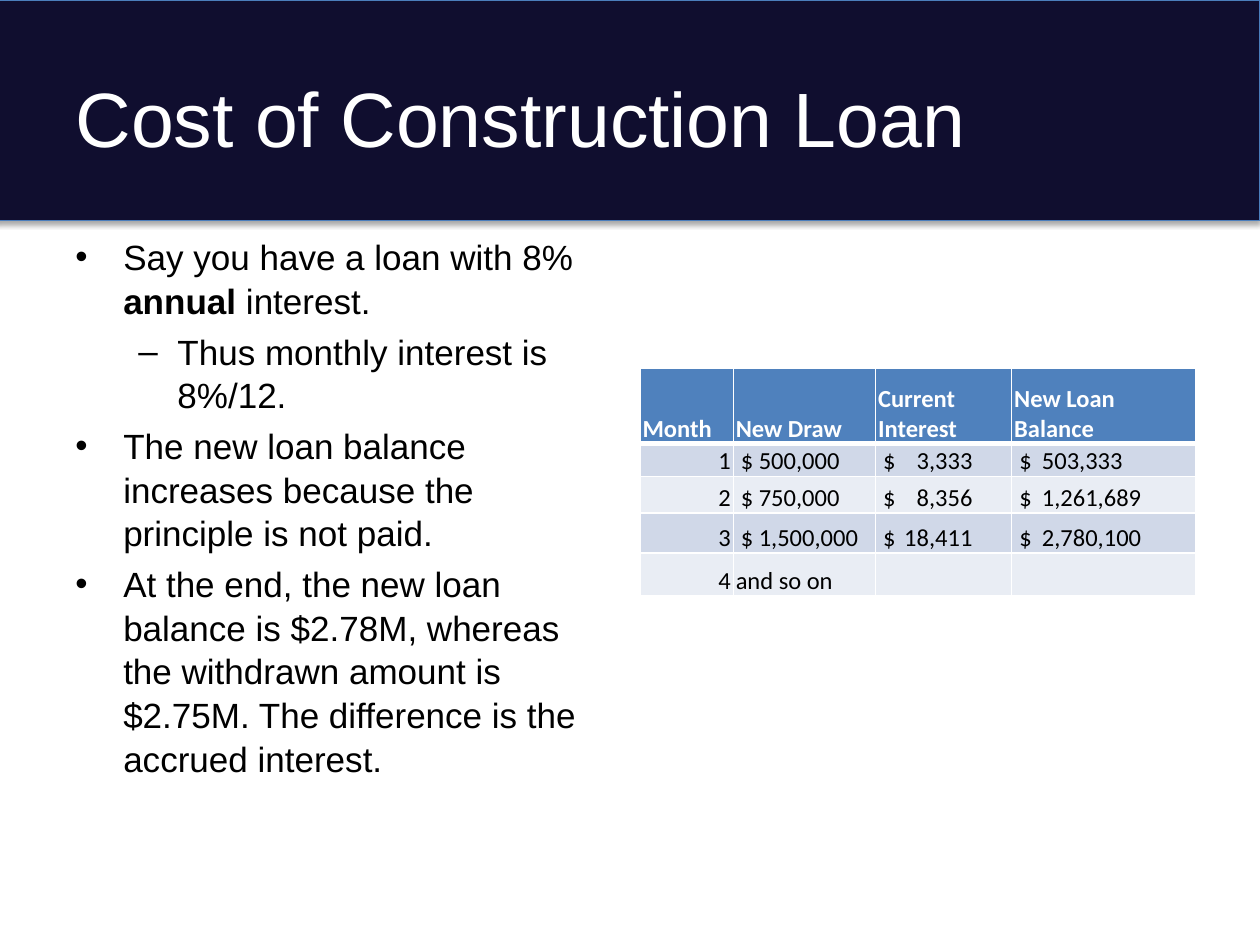
import pptx
import pptx.dml.color
import pptx.enum.shapes
import pptx.enum.text
import pptx.oxml
import pptx.oxml.ns
import pptx.util

Inches = pptx.util.Inches
Pt = pptx.util.Pt
ALIGN = pptx.enum.text.PP_ALIGN
ANCHOR = pptx.enum.text.MSO_ANCHOR

COLORS = {
    "navy": "100E2F", "edge": "4B7EBC", "white": "FFFFFF", "black": "000000",
    "head": "4F81BD", "dark": "D0D8E8", "light": "E9EDF4",
}
POINTS = [
    (0, [("Say you have a loan with 8% ", False), ("annual", True), (" interest.", False)]),
    (1, [("Thus monthly interest is 8%/12.", False)]),
    (0, [("The new loan balance increases because the principle is not paid.", False)]),
    (0, [("At the end, the new loan balance is $2.78M, whereas the withdrawn "
          "amount is $2.75M. The difference is the accrued interest.", False)]),
]
LEVELS = [("•", 0.38, 0.38), ("–", 0.81, 0.31)]
ROWS = [
    ["Month", "New Draw", "Current Interest", "New Loan Balance"],
    ["1", "$ 500,000", "$\t3,333", "$\t503,333"],
    ["2", "$ 750,000", "$\t8,356", "$\t1,261,689"],
    ["3", "$ 1,500,000", "$\t18,411", "$\t2,780,100"],
    ["4", "and so on", "", ""],
]
WIDTHS = [0.74, 1.13, 1.08, 1.46]
HEIGHTS = [0.6, 0.26, 0.29, 0.32, 0.34]
TABS = {2: (0.71, "r"), 3: (0.18, "l")}


def color(name):
    return pptx.dml.color.RGBColor.from_string(COLORS[name])


def node(xml):
    space = pptx.oxml.ns.nsdecls("a")
    return pptx.oxml.parse_xml(xml.replace(" ", f" {space} ", 1))


def text(para, words, size=20, font="Arial", ink="black", bold=False):
    run = para.add_run()
    run.text = words
    run.font.size = Pt(size)
    run.font.name = font
    run.font.bold = bold
    run.font.color.rgb = color(ink)


def place(shape, left, top, width, height):
    shape.left, shape.top = Inches(left), Inches(top)
    shape.width, shape.height = Inches(width), Inches(height)


def banner(slide):
    bar = slide.shapes.add_shape(
        pptx.enum.shapes.MSO_SHAPE.RECTANGLE,
        Inches(-0.04), 0, Inches(10.04), Inches(1.75))
    bar.fill.solid()
    bar.fill.fore_color.rgb = color("navy")
    bar.line.color.rgb = color("edge")
    bar.line.width = Pt(0.75)
    bar.shadow.inherit = False
    glow = bar.element.spPr.find(pptx.oxml.ns.qn("a:effectLst"))
    glow.append(node(
        f'<a:outerShdw blurRad="{Pt(3.1)}" dist="{Pt(1.8)}" dir="5400000" rotWithShape="0">'
        f'<a:srgbClr val="{COLORS["black"]}"><a:alpha val="35000"/></a:srgbClr></a:outerShdw>'))
    slide.shapes.title.element.addprevious(bar.element)


def title(slide, words):
    head = slide.shapes.title
    place(head, 0.5, 0.3, 9, 1.25)
    head.text_frame.vertical_anchor = ANCHOR.MIDDLE
    para = head.text_frame.paragraphs[0]
    para.alignment = ALIGN.LEFT
    text(para, words, size=44, ink="white")


def bullets(slide):
    box = slide.shapes.add_textbox(Inches(0.5), Inches(1.81), Inches(4.42), Inches(4.95))
    frame = box.text_frame
    frame.word_wrap = True
    for i, (level, runs) in enumerate(POINTS):
        para = frame.add_paragraph() if i else frame.paragraphs[0]
        para.level = level
        para.space_before = Pt(4)
        para.line_spacing = 1.04
        mark, left, hang = LEVELS[level]
        props = para._p.get_or_add_pPr()
        props.set("marL", str(Inches(left)))
        props.set("indent", str(-Inches(hang)))
        props.append(node('<a:buFont typeface="Arial"/>'))
        props.append(node(f'<a:buChar char="{mark}"/>'))
        for words, bold in runs:
            text(para, words, bold=bold)


def border(cell, row):
    props = cell._tc.get_or_add_tcPr()
    thick = {"T": 3 if row == 1 else 1, "B": 3 if row == 0 else 1}
    for side in "LRTB":
        props.append(node(
            f'<a:ln{side} w="{Pt(thick.get(side, 1))}"><a:solidFill>'
            f'<a:srgbClr val="{COLORS["white"]}"/></a:solidFill></a:ln{side}>'))


def fill(cell, row, col, words):
    money = words.startswith("$")
    cell.margin_left = Inches(0.06 if money else 0.02)
    cell.margin_right = cell.margin_top = Inches(0.02)
    cell.margin_bottom = 0
    cell.vertical_anchor = ANCHOR.BOTTOM
    border(cell, row)
    cell.fill.solid()
    shade = "head" if row == 0 else "dark" if row % 2 else "light"
    cell.fill.fore_color.rgb = color(shade)
    para = cell.text_frame.paragraphs[0]
    para.alignment = ALIGN.RIGHT if row and col == 0 else ALIGN.LEFT
    if money and col in TABS:
        stop, side = TABS[col]
        para._p.get_or_add_pPr().append(node(
            f'<a:tabLst ><a:tab pos="{Inches(stop)}" algn="{side}"/></a:tabLst>'))
    text(para, words, size=14, font="Calibri",
         ink="black" if row else "white", bold=row == 0)


def table(slide):
    grid = slide.shapes.add_table(
        len(ROWS), len(WIDTHS), Inches(5.08), Inches(2.92),
        Inches(sum(WIDTHS)), Inches(sum(HEIGHTS))).table
    for col, width in zip(grid.columns, WIDTHS):
        col.width = Inches(width)
    for row, height in zip(grid.rows, HEIGHTS):
        row.height = Inches(height)
    for r, row in enumerate(ROWS):
        for c, words in enumerate(row):
            fill(grid.cell(r, c), r, c, words)


def main():
    deck = pptx.Presentation()
    deck.slide_width, deck.slide_height = Inches(10), Inches(7.5)
    slide = deck.slides.add_slide(deck.slide_layouts.get_by_name("Title Only"))
    banner(slide)
    title(slide, "Cost of Construction Loan")
    bullets(slide)
    table(slide)
    deck.save("out.pptx")


if __name__ == "__main__":
    main()
